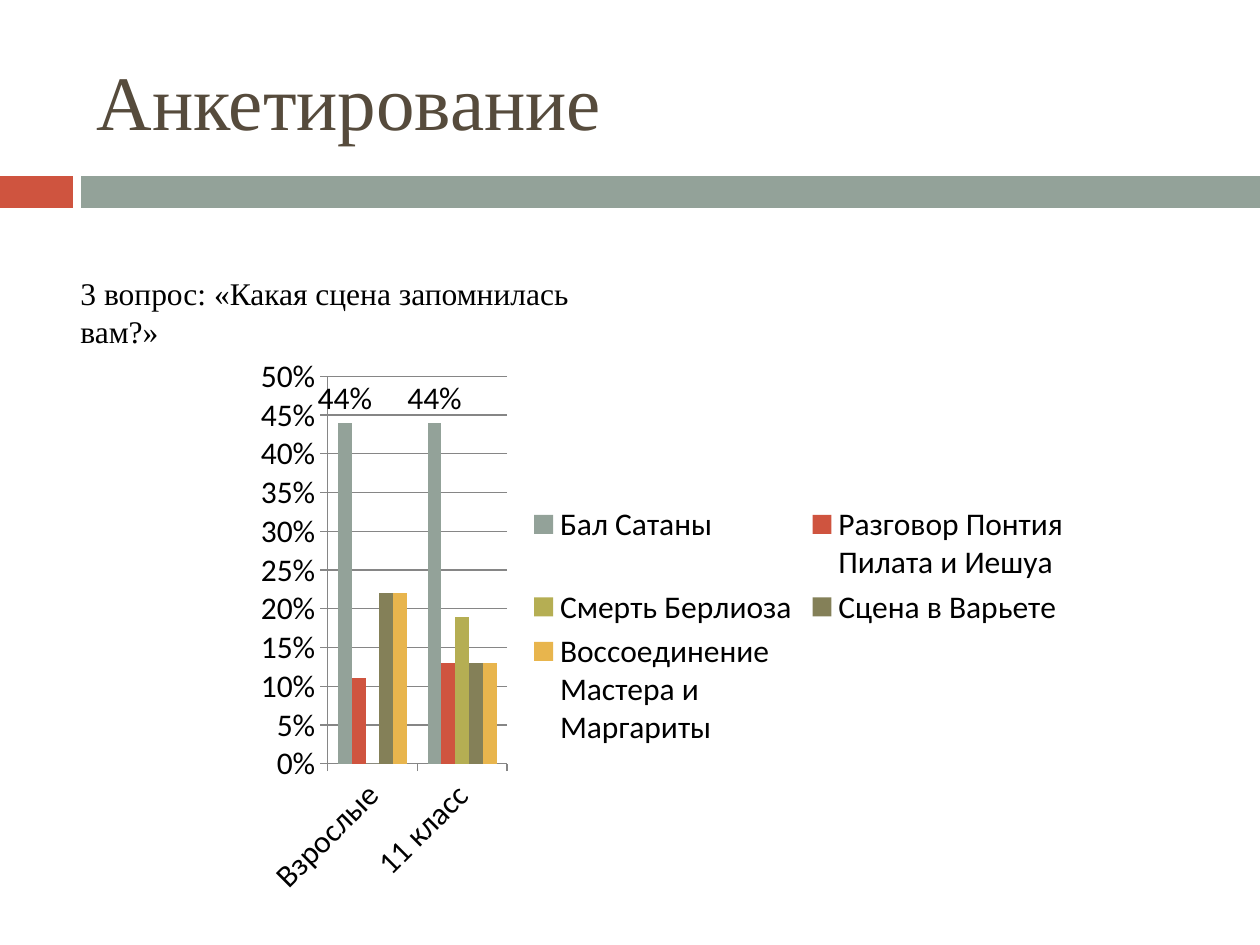
from pptx import Presentation
from pptx.chart.data import CategoryChartData
from pptx.dml.color import RGBColor
from pptx.enum.chart import XL_CHART_TYPE as ChartType, XL_LABEL_POSITION as LabelPosition
from pptx.enum.chart import XL_LEGEND_POSITION as LegendPosition, XL_TICK_MARK as TickMark
from pptx.enum.shapes import MSO_SHAPE as Shape
from pptx.enum.text import MSO_ANCHOR as Anchor, PP_ALIGN as Align
from pptx.util import Emu, Pt

TITLE = "Анкетирование"
QUESTION = "3 вопрос: «Какая сцена запомнилась вам?»"
GROUPS = ["Взрослые", "11 класс"]
SCENES = [
    ("Бал Сатаны", (0.44, 0.44), "93A299"),
    ("Разговор Понтия Пилата и Иешуа", (0.11, 0.13), "CF543F"),
    ("Смерть Берлиоза", (0, 0.19), "B5AE53"),
    ("Сцена в Варьете", (0.22, 0.13), "848058"),
    ("Воссоединение Мастера и Маргариты", (0.22, 0.13), "E8B54D"),
]
BANDS = [((0, 176, 73, 32), "CF543F"), ((81, 176, 1179, 32), "93A299")]
PLACES = {
    "title": (84, 32, 1124, 136),
    "question": (68, 268, 596, 90),
    "chart": (244, 346, 840, 560),
}
THEME = {
    "title": {"name": "Times New Roman", "size": Pt(44), "color": "564B3C"},
    "question": {"name": "Times New Roman", "size": Pt(18), "color": "000000"},
    "chart": {"name": "Calibri", "size": Pt(18), "color": "000000"},
    "line": "868686",
}
SCALE = 914400 / 126


def px(*lengths):
    return [Emu(round(length * SCALE)) for length in lengths]


def assign(target, values):
    for name, value in values.items():
        setattr(target, name, value)


def style(font, role):
    values = dict(THEME[role])
    font.color.rgb = RGBColor.from_string(values.pop("color"))
    assign(font, values)


def write(box, text, role, anchor):
    assign(box, dict(zip(("left", "top", "width", "height"), px(*PLACES[role]))))
    assign(box.text_frame, {"text": text, "word_wrap": True, "vertical_anchor": anchor})
    para = box.text_frame.paragraphs[0]
    para.alignment = Align.LEFT
    style(para.runs[0].font, role)


def add_band(page, place, color):
    band = page.shapes.add_shape(Shape.RECTANGLE, *px(*place))
    band.shadow.inherit = False
    band.fill.solid()
    band.fill.fore_color.rgb = RGBColor.from_string(color)
    band.line.fill.background()


def add_survey_chart(page):
    data = CategoryChartData(number_format="0%")
    data.categories = GROUPS
    for name, shares, _ in SCENES:
        data.add_series(name, shares)
    chart = page.shapes.add_chart(
        ChartType.COLUMN_CLUSTERED, *px(*PLACES["chart"]), data
    ).chart
    assign(chart, {"has_title": False, "has_legend": True})
    style(chart.font, "chart")
    assign(chart.legend, {"position": LegendPosition.RIGHT, "include_in_layout": False})

    line_color = RGBColor.from_string(THEME["line"])
    for axis in (chart.category_axis, chart.value_axis):
        assign(axis, {"major_tick_mark": TickMark.OUTSIDE, "minor_tick_mark": TickMark.NONE})
        axis.format.line.color.rgb = line_color
    values = chart.value_axis
    values.has_major_gridlines = True
    values.major_gridlines.format.line.color.rgb = line_color
    assign(values.tick_labels, {"number_format": "0%", "number_format_is_linked": False})

    plot = chart.plots[0]
    assign(plot, {"gap_width": 150, "vary_by_categories": False})
    for series, (_, _, color) in zip(plot.series, SCENES):
        series.format.fill.solid()
        series.format.fill.fore_color.rgb = RGBColor.from_string(color)
    assign(plot.series[0].data_labels, {
        "show_value": True,
        "number_format": "0%",
        "number_format_is_linked": False,
        "position": LabelPosition.OUTSIDE_END,
    })


def main():
    deck = Presentation()
    deck.slide_width, deck.slide_height = px(1260, 945)
    page = deck.slides.add_slide(deck.slide_layouts[5])
    for place, color in BANDS:
        add_band(page, place, color)
    write(page.shapes.title, TITLE, "title", Anchor.MIDDLE)
    question = page.shapes.add_textbox(*px(*PLACES["question"]))
    write(question, QUESTION, "question", Anchor.TOP)
    add_survey_chart(page)
    deck.save("out.pptx")


if __name__ == "__main__":
    main()
